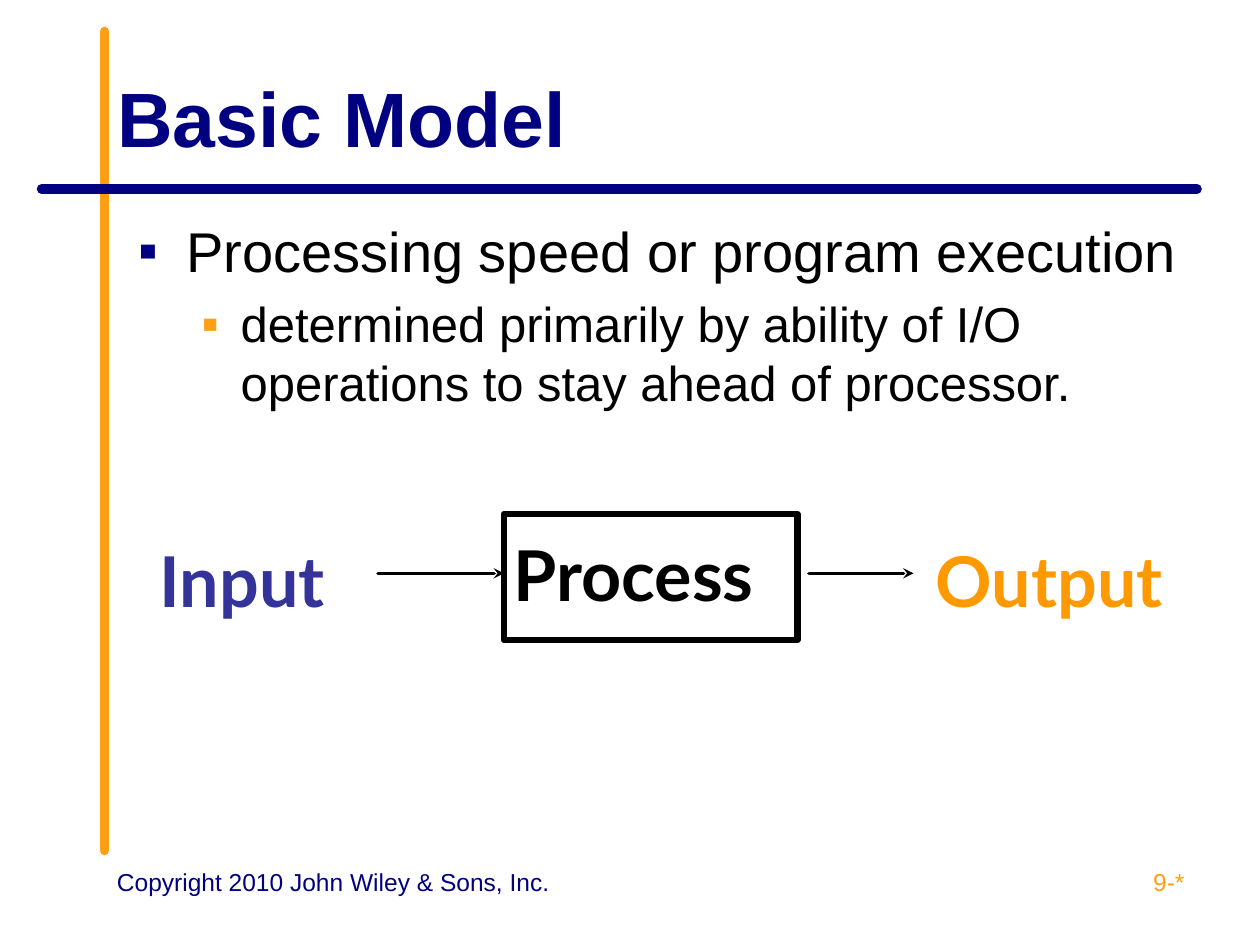
from lxml import etree
from pptx import Presentation
from pptx.dml.color import RGBColor
from pptx.enum.shapes import MSO_CONNECTOR, MSO_SHAPE
from pptx.enum.text import MSO_ANCHOR, MSO_AUTO_SIZE, PP_ALIGN
from pptx.oxml.ns import qn
from pptx.util import Inches, Pt

STRAIGHT = MSO_CONNECTOR.STRAIGHT
RECTANGLE = MSO_SHAPE.RECTANGLE
LEFT, RIGHT = PP_ALIGN.LEFT, PP_ALIGN.RIGHT
TOP, MIDDLE = MSO_ANCHOR.TOP, MSO_ANCHOR.MIDDLE
NO_FIT = MSO_AUTO_SIZE.NONE

NAVY = RGBColor(0x00, 0x00, 0x80)
AMBER = RGBColor(0xFF, 0x9F, 0x11)
INDIGO = RGBColor(0x33, 0x33, 0x99)
ORANGE = RGBColor(0xFF, 0x99, 0x00)
BLACK = RGBColor(0x00, 0x00, 0x00)

ARROW_Y = 4.55


def format_font(font, color, **values):
    font.color.rgb = color
    for name, value in values.items():
        setattr(font, name, value)


def prepare_frame(shape, area, anchor=TOP):
    """Place a text shape and give it a wrapping frame of fixed size."""
    shape.left, shape.top, shape.width, shape.height = map(Inches, area)
    frame = shape.text_frame
    frame.auto_size = NO_FIT
    frame.word_wrap = True
    frame.vertical_anchor = anchor
    return frame


def add_label(page, area, text, color, align=LEFT, **font_values):
    box = page.shapes.add_textbox(*map(Inches, area))
    para = prepare_frame(box, area).paragraphs[0]
    para.text = text
    para.alignment = align
    format_font(para.font, color, **font_values)


def add_line(page, start, end, color, width, arrow=False):
    line = page.shapes.add_connector(STRAIGHT, *map(Inches, start + end))
    line.line.color.rgb = color
    line.line.width = Pt(width)
    outline = line.line._get_or_add_ln()
    outline.set("cap", "rnd")
    etree.SubElement(outline, qn("a:round"))
    if arrow:
        etree.SubElement(outline, qn("a:tailEnd"), type="stealth")
    etree.SubElement(line._element.spPr, qn("a:effectLst"))


def fill_title(page, text):
    para = prepare_frame(page.shapes.title, (0.83, 0.3, 8.67, 1.25), MIDDLE).paragraphs[0]
    para.text = text
    para.alignment = LEFT
    format_font(para.font, NAVY, name="Arial", size=Pt(44), bold=True)


def add_bullet(para, color, indent, hanging):
    properties = para._p.get_or_add_pPr()
    properties.set("marL", str(Inches(indent)))
    properties.set("indent", str(-Inches(hanging)))
    bullet_color = etree.SubElement(properties, qn("a:buClr"))
    etree.SubElement(bullet_color, qn("a:srgbClr"), val=str(color))
    etree.SubElement(properties, qn("a:buFont"), typeface="Arial")
    etree.SubElement(properties, qn("a:buChar"), char="▪")


def fill_body(page, items):
    frame = prepare_frame(page.placeholders[1], (1, 1.67, 8.5, 4.95))
    for level, (text, size, color, indent, hanging, before) in enumerate(items):
        para = frame.add_paragraph() if level else frame.paragraphs[0]
        para.text = text
        para.level = level
        para.space_before = Pt(before)
        add_bullet(para, color, indent, hanging)
        format_font(para.font, BLACK, name="Arial", size=Pt(size))


def add_process_box(page):
    box = page.shapes.add_shape(RECTANGLE, *map(Inches, (4, 4.08, 2.33, 1)))
    box.shadow.inherit = False
    box.fill.background()
    box.line.color.rgb = BLACK
    box.line.width = Pt(3.75)


def add_flow(page):
    stages = [
        ("Input", (1.17, 4.22, 1.97, 0.77), INDIGO),
        ("Process", (3.98, 4.17, 2.56, 0.77), BLACK),
        ("Output", (7.33, 4.22, 2.15, 0.77), ORANGE),
    ]
    for text, area, color in stages:
        add_label(page, area, text, color, name="Lato", size=Pt(40), bold=True)
    for start, end in [(3, 4), (6.42, 7.25)]:
        add_line(page, (start, ARROW_Y), (end, ARROW_Y), BLACK, 2, arrow=True)
    add_process_box(page)


def add_footer(page):
    footer_font = {"name": "Arial", "size": Pt(14)}
    add_label(page, (0.83, 6.83, 3.67, 0.52), "Copyright 2010 John Wiley & Sons, Inc.",
              NAVY, **footer_font)
    add_label(page, (7.17, 6.83, 2.33, 0.52), "9-*", AMBER, RIGHT, **footer_font)


def main():
    deck = Presentation()
    deck.slide_width, deck.slide_height = Inches(10), Inches(7.5)
    page = deck.slides.add_slide(deck.slide_layouts[1])
    add_line(page, (0.83, 6.75), (0.83, 0.25), AMBER, 5.5)
    add_line(page, (9.5, 1.5), (0.33, 1.5), NAVY, 5.5)
    add_footer(page)
    fill_title(page, "Basic Model")
    fill_body(page, [
        ("Processing speed or program execution", 32, NAVY, 0.38, 0.38, 0),
        ("determined primarily by ability of I/O operations to stay ahead of processor.",
         28, AMBER, 0.81, 0.31, 5.6),
    ])
    add_flow(page)
    deck.save("out.pptx")


if __name__ == "__main__":
    main()
